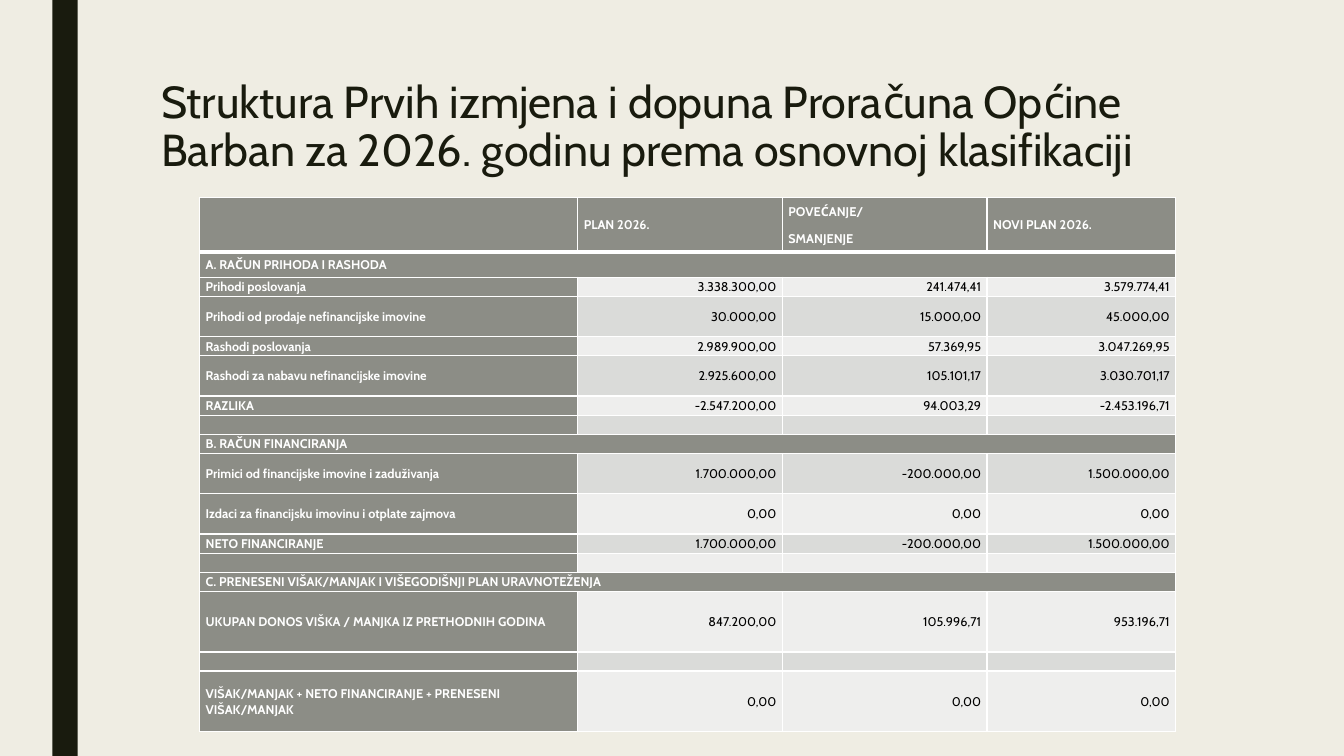
import pptx
import pptx.util
import pptx.dml.color
import pptx.enum.shapes
import pptx.enum.text
import pptx.oxml
import pptx.oxml.ns
from lxml import etree

RGBColor = pptx.dml.color.RGBColor
Inches = pptx.util.Inches
Pt = pptx.util.Pt
PP_ALIGN = pptx.enum.text.PP_ALIGN
qn = pptx.oxml.ns.qn

CREAM = RGBColor(0xEF, 0xED, 0xE3)
INK = RGBColor(0x19, 0x1B, 0x0E)
GREY = RGBColor(0x8C, 0x8D, 0x86)
LIGHT_BAND = RGBColor(0xEE, 0xEE, 0xED)
DARK_BAND = RGBColor(0xDA, 0xDB, 0xD9)
WHITE = RGBColor(0xFF, 0xFF, 0xFF)
BLACK = RGBColor(0, 0, 0)

TITLE = "Struktura Prvih izmjena i dopuna Proračuna Općine Barban za 2026. godinu prema osnovnoj klasifikaciji"
COLUMN_WIDTHS = [3.75, 2.03, 2.03, 1.87]
BUDGET_ROWS = [
    (0.54, ["", "PLAN 2026.", "POVEĆANJE/\nSMANJENJE", "NOVI PLAN 2026."]),
    (0.25, ["A. RAČUN PRIHODA I RASHODA"]),
    (0.19, ["Prihodi poslovanja", "3.338.300,00", "241.474,41", "3.579.774,41"]),
    (0.4, ["Prihodi od prodaje nefinancijske imovine", "30.000,00", "15.000,00", "45.000,00"]),
    (0.19, ["Rashodi poslovanja", "2.989.900,00", "57.369,95", "3.047.269,95"]),
    (0.4, ["Rashodi za nabavu nefinancijske imovine", "2.925.600,00", "105.101,17", "3.030.701,17"]),
    (0.19, ["RAZLIKA", "-2.547.200,00", "94.003,29", "-2.453.196,71"]),
    (0.19, ["", "", "", ""]),
    (0.19, ["B. RAČUN FINANCIRANJA"]),
    (0.4, ["Primici od financijske imovine i zaduživanja", "1.700.000,00", "-200.000,00", "1.500.000,00"]),
    (0.4, ["Izdaci za financijsku imovinu i otplate zajmova", "0,00", "0,00", "0,00"]),
    (0.19, ["NETO FINANCIRANJE", "1.700.000,00", "-200.000,00", "1.500.000,00"]),
    (0.19, ["", "", "", ""]),
    (0.19, ["C. PRENESENI VIŠAK/MANJAK I VIŠEGODIŠNJI PLAN URAVNOTEŽENJA"]),
    (0.6, ["UKUPAN DONOS VIŠKA / MANJKA IZ PRETHODNIH GODINA", "847.200,00", "105.996,71", "953.196,71"]),
    (0.19, ["", "", "", ""]),
    (0.6, ["VIŠAK/MANJAK + NETO FINANCIRANJE + PRENESENI VIŠAK/MANJAK", "0,00", "0,00", "0,00"]),
]


class BudgetSlide:
    """Holds the style and the current slide, and draws its elements."""

    def __init__(self, slide, font="Cabin"):
        self.slide = slide
        self.font = font
        slide.background.fill.solid()
        slide.background.fill.fore_color.rgb = CREAM

    def run(self, paragraph, text, size, color, bold=False):
        run = paragraph.add_run()
        run.text = text
        run.font.name = self.font
        run.font.size = Pt(size)
        run.font.bold = bold
        run.font.color.rgb = color

    def stripe(self, left, top, width, height):
        stripe = self.slide.shapes.add_shape(
            pptx.enum.shapes.MSO_SHAPE.RECTANGLE,
            Inches(left), Inches(top), Inches(width), Inches(height))
        stripe.shadow.inherit = False
        stripe.fill.solid()
        stripe.fill.fore_color.rgb = INK
        stripe.line.fill.background()

    def title(self, text, left, top, width, height):
        frame = self.slide.shapes.add_textbox(
            Inches(left), Inches(top), Inches(width), Inches(height)).text_frame
        frame.word_wrap = True
        frame.paragraphs[0].line_spacing = 0.89
        self.run(frame.paragraphs[0], text, 32, INK)

    def borders(self, cell, top, bottom):
        properties = cell._tc.get_or_add_tcPr()
        for side, width in (("L", 1), ("R", 1), ("T", top), ("B", bottom)):
            line = etree.SubElement(properties, qn(f"a:ln{side}"), w=str(Pt(width)))
            fill = etree.SubElement(line, qn("a:solidFill"))
            etree.SubElement(fill, qn("a:srgbClr"), val=str(WHITE))

    def cell(self, cell, text, fill, color, bold, align, space_after):
        cell.fill.solid()
        cell.fill.fore_color.rgb = fill
        cell.vertical_anchor = pptx.enum.text.MSO_ANCHOR.MIDDLE
        cell.margin_left = cell.margin_right = Inches(0.06)
        cell.margin_top = cell.margin_bottom = 0
        frame = cell.text_frame
        for index, line in enumerate(text.split("\n")):
            paragraph = frame.add_paragraph() if index else frame.paragraphs[0]
            if not line:
                etree.SubElement(paragraph._p, qn("a:endParaRPr"), sz="900")
                continue
            paragraph.alignment = align
            paragraph.line_spacing = 1.07
            paragraph.space_after = Pt(space_after)
            self.run(paragraph, line, 9, color, bold)

    def table(self, rows, column_widths, left, top):
        heights = [height for height, _ in rows]
        table = self.slide.shapes.add_table(
            len(rows), len(column_widths), Inches(left), Inches(top),
            Inches(sum(column_widths)), Inches(sum(heights))).table
        for column, width in zip(table.columns, column_widths):
            column.width = Inches(width)
        for r, (height, texts) in enumerate(rows):
            table.rows[r].height = Inches(height)
            for c in range(len(column_widths)):
                self.borders(table.cell(r, c), 3 if r == 1 else 1, 3 if r == 0 else 1)
            is_section = len(texts) == 1
            if is_section:
                table.cell(r, 0).merge(table.cell(r, len(column_widths) - 1))
            band = DARK_BAND if r % 2 else LIGHT_BAND
            for c, text in enumerate(texts):
                if r == 0 or c == 0:
                    style = (GREY, WHITE, True, PP_ALIGN.LEFT)
                else:
                    style = (band, BLACK, False, PP_ALIGN.RIGHT)
                self.cell(table.cell(r, c), text, *style, 6 if is_section else 8)


def main():
    deck = pptx.Presentation()
    deck.slide_width = Inches(13.33)
    deck.slide_height = Inches(7.5)
    budget = BudgetSlide(deck.slides.add_slide(deck.slide_layouts[6]))
    budget.stripe(0.52, 0, 0.25, 7.5)
    budget.title(TITLE, 1.5, 0.75, 10.5, 1.62)
    budget.table(BUDGET_ROWS, COLUMN_WIDTHS, 1.98, 1.96)
    deck.save("out.pptx")


if __name__ == "__main__":
    main()
